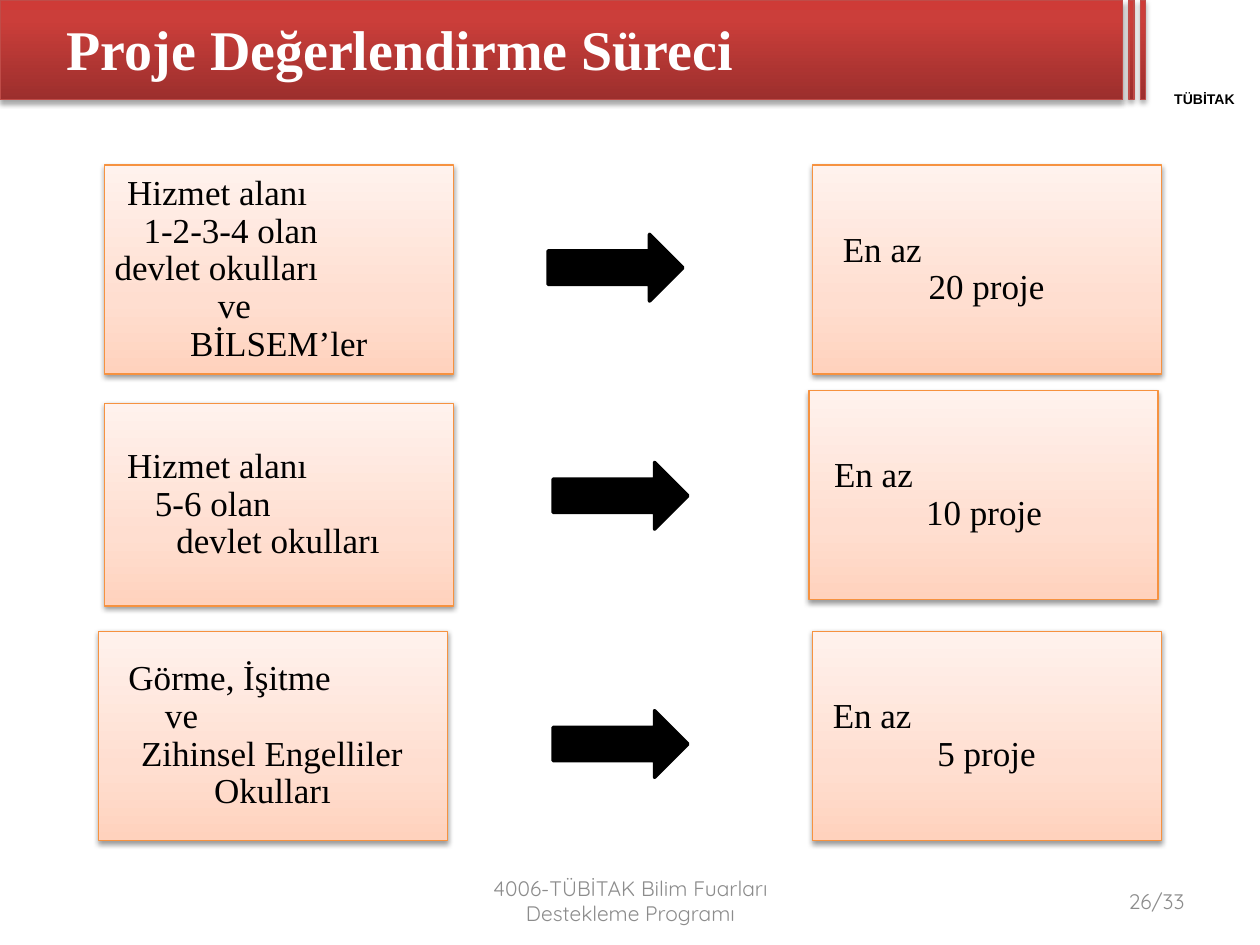
from lxml.etree import SubElement
from pptx import Presentation
from pptx.dml.color import RGBColor
from pptx.enum.shapes import MSO_SHAPE
from pptx.enum.text import MSO_ANCHOR, PP_ALIGN
from pptx.oxml.ns import qn
from pptx.util import Inches, Pt

THEME = {
    "bar": {"stops": [(0, "9C2F2D"), (80, "CB3E3A"), (100, "CE3B37")],
            "line": "BF4C48", "shadow": (35, 1.8)},
    "card": {"stops": [(0, "FFD2BD"), (35, "FFDED0"), (100, "FFF2ED")],
             "line": "F69240", "shadow": (38, 1.6)},
    "arrow": "000000",
    "title": {"name": "Times New Roman", "size": 32, "color": "FFFFFF", "bold": True},
    "body": {"name": "Times New Roman", "size": 20, "color": "000000", "bold": False},
    "label": {"name": "Arial", "size": 8, "color": "000000", "bold": True},
    "footer": {"name": "Quicksand", "size": 12, "color": "8C8C8C", "bold": False},
}

BARS = [(0, 8.91), (8.96, 0.04), (9.05, 0.04)]
BAR_H = 0.79
CARD_W = 2.77
ARROW_W, ARROW_H = 1.07, 0.53

CARDS = [
    (0.83, 1.31, 1.66, [("Hizmet alanı", 0.1), ("1-2-3-4 olan", 0.23),
                        ("devlet okulları", 0), ("ve", 0.82), ("BİLSEM’ler", 0.6)]),
    (6.45, 1.31, 1.66, [("En az", 0.16), ("20 proje", 0.84)]),
    (0.83, 3.2, 1.61, [("Hizmet alanı", 0.1), ("5-6 olan", 0.32),
                       ("devlet okulları", 0.49)]),
    (6.42, 3.1, 1.66, [("En az", 0.12), ("10 proje", 0.85)]),
    (0.78, 5.01, 1.66, [("Görme, İşitme", 0.16), ("ve", 0.45),
                        ("Zihinsel Engelliler", 0.26), ("Okulları", 0.84)]),
    (6.45, 5.01, 1.66, [("En az", 0.08), ("5 proje", 0.91)]),
]
ARROWS = [(4.35, 1.86), (4.39, 3.67), (4.39, 5.64)]

TEXTS = [
    ("Proje Değerlendirme Süreci", (0.43, 0, 8.5, 0.77), "title", PP_ALIGN.LEFT, 0.1),
    ("TÜBİTAK", (9.12, 0.72, 0.88, 0.13), "label", PP_ALIGN.CENTER, 0),
    ("4006-TÜBİTAK Bilim Fuarları Destekleme Programı", (3.42, 6.95, 3.17, 0.4),
     "footer", PP_ALIGN.CENTER, 0.1),
    ("26/33", (7.17, 6.95, 2.33, 0.4), "footer", PP_ALIGN.RIGHT, 0.1),
]


def set_attrs(obj, values):
    for key, value in values.items():
        setattr(obj, key, value)


def set_frame(tf, side, top):
    set_attrs(tf, {"word_wrap": True, "vertical_anchor": MSO_ANCHOR.MIDDLE,
                   "margin_left": Inches(side), "margin_right": Inches(side),
                   "margin_top": Inches(top), "margin_bottom": Inches(top)})


def add_run(p, text, style):
    f = THEME[style]
    r = p.add_run()
    r.text = text
    set_attrs(r.font, {"name": f["name"], "size": Pt(f["size"]), "bold": f["bold"]})
    r.font.color.rgb = RGBColor.from_string(f["color"])


def add_shape(s, kind, box, line, width):
    sp = s.shapes.add_shape(kind, *map(Inches, box))
    sp.shadow.inherit = False
    sp.line.color.rgb = RGBColor.from_string(line)
    sp.line.width = Pt(width)
    return sp


def add_panel(s, box, style):
    look = THEME[style]
    sp = add_shape(s, MSO_SHAPE.RECTANGLE, box, look["line"], 0.75)
    sp.fill.gradient()
    sp.fill.gradient_angle = 90
    spPr = sp.element.spPr
    stops = spPr.find(".//" + qn("a:gsLst"))
    for old in list(stops):
        stops.remove(old)
    for pos, color in look["stops"]:
        gs = SubElement(stops, qn("a:gs"), pos=str(pos * 1000))
        SubElement(gs, qn("a:srgbClr"), val=color)
    alpha, dist = look["shadow"]
    shadow = SubElement(spPr.find(qn("a:effectLst")), qn("a:outerShdw"),
                        blurRad=str(Pt(3.1)), dist=str(Pt(dist)),
                        dir="5400000", rotWithShape="0")
    color = SubElement(shadow, qn("a:srgbClr"), val="000000")
    SubElement(color, qn("a:alpha"), val=str(alpha * 1000))
    return sp


def add_card(s, left, top, height, lines):
    tf = add_panel(s, (left, top, CARD_W, height), "card").text_frame
    set_frame(tf, 0.08, 0.08)
    for i, (text, indent) in enumerate(lines):
        p = tf.add_paragraph() if i else tf.paragraphs[0]
        p.alignment = PP_ALIGN.LEFT
        p.line_spacing = 0.9
        p._p.get_or_add_pPr().set("marL", str(Inches(indent)))
        add_run(p, text, "body")


def add_text(s, text, box, style, align, side):
    tf = s.shapes.add_textbox(*map(Inches, box)).text_frame
    set_frame(tf, side, side / 2)
    p = tf.paragraphs[0]
    p.alignment = align
    add_run(p, text, style)


def main():
    prs = Presentation()
    prs.slide_width, prs.slide_height = Inches(10), Inches(7.5)
    s = prs.slides.add_slide(prs.slide_layouts[6])
    for left, width in BARS:
        add_panel(s, (left, 0, width, BAR_H), "bar")
    for card in CARDS:
        add_card(s, *card)
    for left, top in ARROWS:
        sp = add_shape(s, MSO_SHAPE.RIGHT_ARROW, (left, top, ARROW_W, ARROW_H),
                       THEME["arrow"], 2)
        sp.fill.solid()
        sp.fill.fore_color.rgb = RGBColor.from_string(THEME["arrow"])
    for item in TEXTS:
        add_text(s, *item)
    prs.save("out.pptx")


if __name__ == "__main__":
    main()
